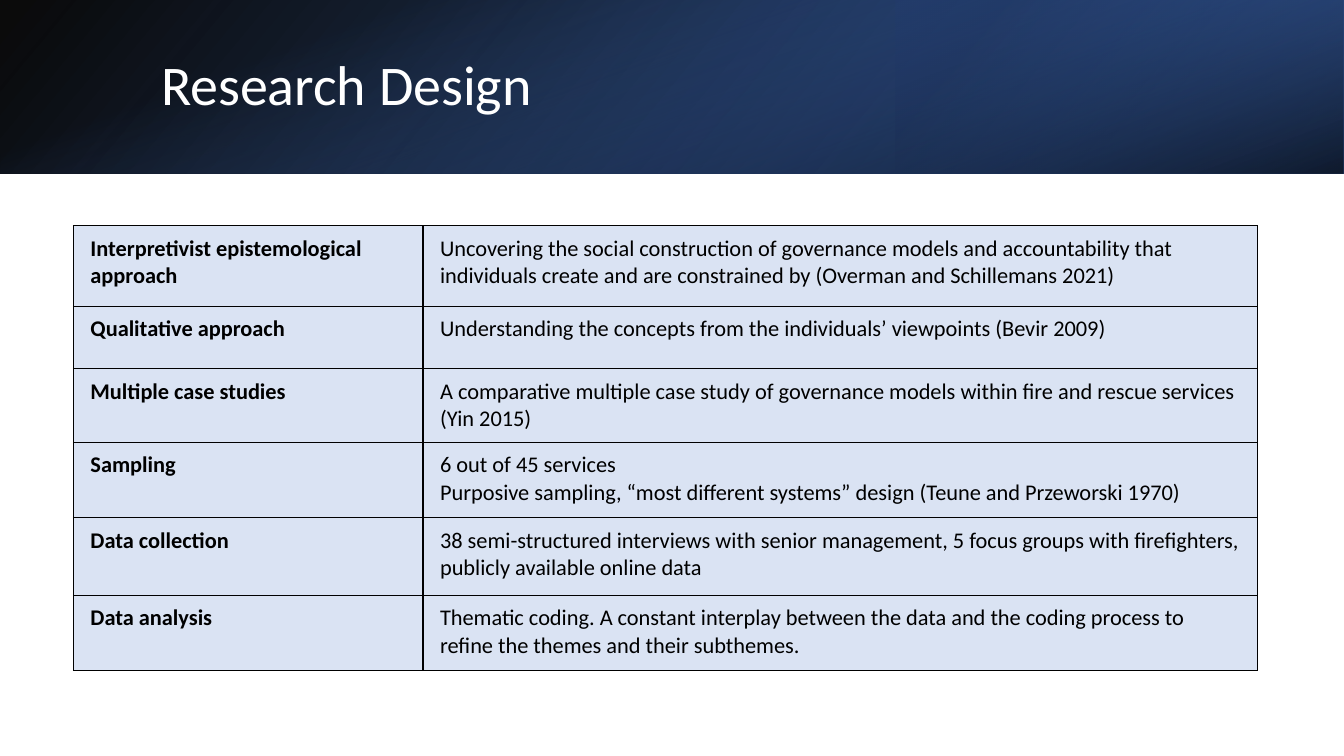
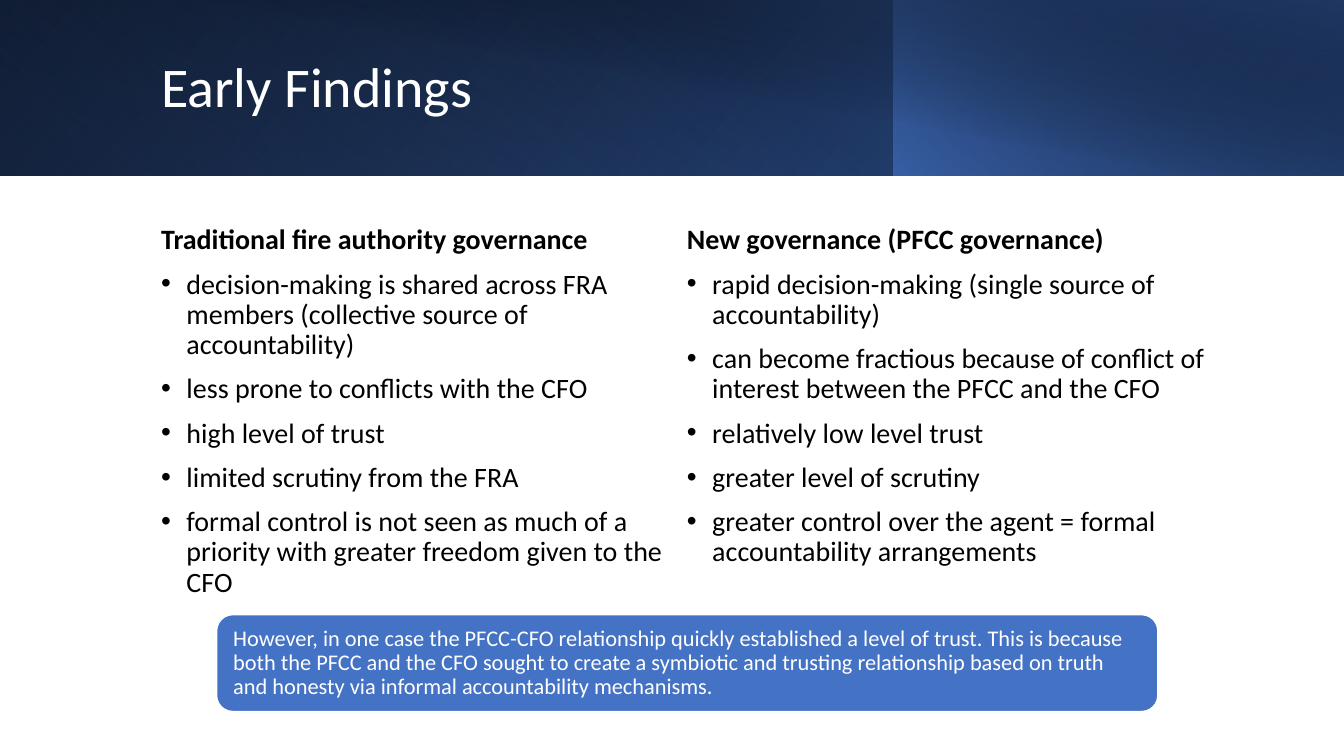
import pptx
import pptx.util
import pptx.dml.color
import pptx.enum.shapes
import pptx.enum.text
import pptx.oxml
import pptx.oxml.ns
import lxml.etree

Cm = pptx.util.Cm
Pt = pptx.util.Pt
qn = pptx.oxml.ns.qn

SLIDE_WIDTH = 33.87
SLIDE_HEIGHT = 19.05
FONT = "Calibri"
BLACK = "000000"
WHITE = "FFFFFF"
BLUE = "4472C4"
MID_BLUE = "2F5597"
NAVY = "203864"
PALE_BLUE = "DAE3F3"

TITLE = {"size": Pt(40), "color": WHITE}
HEADING = {"size": Pt(20), "color": BLACK, "bold": True}
BULLET = {"size": Pt(20), "color": BLACK}
ROW_LABEL = {"size": Pt(16), "color": BLACK, "bold": True}
ROW_DETAIL = {"size": Pt(16), "color": BLACK, "bold": False}
CALLOUT = {"size": Pt(16), "color": WHITE}
TIGHT = {"line_spacing": 0.9}
SPACED = {"line_spacing": 0.9, "space_before": Pt(10)}

DESIGN = [
    ("Interpretivist epistemological approach",
     "Uncovering the social construction of governance models and accountability that "
     "individuals create and are constrained by (Overman and Schillemans 2021)", 2.03),
    ("Qualitative approach",
     "Understanding the concepts from the individuals’ viewpoints (Bevir 2009)", 1.57),
    ("Multiple case studies",
     "A comparative multiple case study of governance models within fire and rescue "
     "services (Yin 2015)", 1.86),
    ("Sampling",
     "6 out of 45 services\n"
     "Purposive sampling, “most different systems” design (Teune and Przeworski 1970)", 1.9),
    ("Data collection",
     "38 semi-structured interviews with senior management, 5 focus groups with "
     "firefighters, publicly available online data", 1.95),
    ("Data analysis",
     "Thematic coding. A constant interplay between the data and the coding process to "
     "refine the themes and their subthemes.", 1.9),
]

FINDINGS = {
    "Traditional fire authority governance": [
        "decision-making is shared across FRA members (collective source of accountability)",
        "less prone to conflicts with the CFO",
        "high level of trust",
        "limited scrutiny from the FRA",
        "formal control is not seen as much of a priority with greater freedom given to the CFO",
    ],
    "New governance (PFCC governance)": [
        "rapid decision-making (single source of accountability)",
        "can become fractious because of conflict of interest between the PFCC and the CFO",
        "relatively low level trust",
        "greater level of scrutiny",
        "greater control over the agent = formal accountability arrangements",
    ],
}

EXCEPTION = (
    "However, in one case the PFCC-CFO relationship quickly established a level of trust. "
    "This is because both the PFCC and the CFO sought to create a symbiotic and trusting "
    "relationship based on truth and honesty via informal accountability mechanisms."
)


def rgb(value):
    return pptx.dml.color.RGBColor.from_string(value)


def apply(target, values):
    for name, value in values.items():
        setattr(target, name, value)


def style_paragraph(paragraph, font_values, spacing):
    apply(paragraph, spacing)
    for run in paragraph.runs:
        apply(run.font, {"name": FONT})
        for name, value in font_values.items():
            if name == "color":
                run.font.color.rgb = rgb(value)
            else:
                setattr(run.font, name, value)


def add_bullet(paragraph):
    properties = paragraph._p.get_or_add_pPr()
    properties.set("marL", str(Cm(0.64)))
    properties.set("indent", str(-Cm(0.64)))
    lxml.etree.SubElement(properties, qn("a:buFont")).set("typeface", "Arial")
    lxml.etree.SubElement(properties, qn("a:buChar")).set("char", "•")


def add_gradient(slide, box, stops, angle, flipped=True, rotation=0):
    band = slide.shapes.add_shape(
        pptx.enum.shapes.MSO_SHAPE.RECTANGLE, *map(Cm, box))
    band.shadow.inherit = False
    band.rotation = rotation
    if flipped:
        band._element.spPr.xfrm.set("flipH", "1")
    band.fill.gradient()
    band.fill.gradient_angle = 360 - angle
    for stop, (position, color, opacity) in zip(band.fill.gradient_stops, stops):
        stop.position = position / 100
        stop.color.rgb = rgb(color)
    colors = band._element.spPr.iter(qn("a:srgbClr"))
    for color, (_, _, opacity) in zip(list(colors), stops):
        lxml.etree.SubElement(color, qn("a:alpha")).set("val", str(opacity * 1000))
    band.line.fill.background()


def add_text_frame(slide, box):
    frame = slide.shapes.add_textbox(*map(Cm, box)).text_frame
    apply(frame, {"word_wrap": True,
                  "vertical_anchor": pptx.enum.text.MSO_ANCHOR.MIDDLE})
    return frame


def add_title(slide, text, box):
    frame = add_text_frame(slide, box)
    frame.text = text
    style_paragraph(frame.paragraphs[0], TITLE, TIGHT)


def add_borders(cell):
    properties = cell._tc.get_or_add_tcPr()
    for side in ("lnL", "lnR", "lnT", "lnB"):
        border = lxml.etree.SubElement(properties, qn("a:" + side))
        border.set("w", str(Pt(1)))
        fill = lxml.etree.SubElement(border, qn("a:solidFill"))
        lxml.etree.SubElement(fill, qn("a:srgbClr")).set("val", BLACK)


def fill_cell(cell, text, font_values):
    apply(cell, {"margin_left": Cm(0.43), "margin_right": Cm(0.43),
                 "margin_top": Cm(0.23), "margin_bottom": Cm(0.23)})
    add_borders(cell)
    cell.fill.solid()
    cell.fill.fore_color.rgb = rgb(PALE_BLUE)
    cell.text_frame.text = text
    for paragraph in cell.text_frame.paragraphs:
        style_paragraph(paragraph, font_values, {})


def add_design_table(slide):
    widths = (8.81, 21.03)
    height = sum(row[2] for row in DESIGN)
    table = slide.shapes.add_table(
        len(DESIGN), len(widths), Cm(1.85), Cm(5.69), Cm(sum(widths)), Cm(height)).table
    apply(table, {"first_row": False, "horz_banding": False})
    for column, width in zip(table.columns, widths):
        column.width = Cm(width)
    for row, (label, detail, row_height) in zip(table.rows, DESIGN):
        row.height = Cm(row_height)
        fill_cell(row.cells[0], label, ROW_LABEL)
        fill_cell(row.cells[1], detail, ROW_DETAIL)


def add_findings(slide):
    frame = add_text_frame(slide, (3.81, 5.26, 27, 10.24))
    frame._txBody.bodyPr.set("numCol", "2")
    paragraph = frame.paragraphs[0]
    for heading, points in FINDINGS.items():
        for text in (heading, *points):
            if paragraph.runs:
                paragraph = frame.add_paragraph()
            paragraph.add_run().text = text
            style_paragraph(paragraph, HEADING if text == heading else BULLET, SPACED)
            if text != heading:
                add_bullet(paragraph)


def add_callout(slide, text):
    callout = slide.shapes.add_shape(
        pptx.enum.shapes.MSO_SHAPE.ROUNDED_RECTANGLE,
        Cm(5.46), Cm(15.49), Cm(23.72), Cm(2.44))
    callout.shadow.inherit = False
    callout.fill.solid()
    callout.fill.fore_color.rgb = rgb(BLUE)
    callout.line.color.rgb = rgb(WHITE)
    callout.line.width = Pt(1)
    frame = callout.text_frame
    apply(frame, {"word_wrap": True,
                  "vertical_anchor": pptx.enum.text.MSO_ANCHOR.MIDDLE,
                  "margin_left": Cm(0.3), "margin_right": Cm(0.3),
                  "margin_top": Cm(0.28), "margin_bottom": Cm(0.28)})
    frame.text = text
    paragraph = frame.paragraphs[0]
    paragraph.alignment = pptx.enum.text.PP_ALIGN.LEFT
    style_paragraph(paragraph, CALLOUT, TIGHT)


def build_research_design(slide):
    band = 4.37
    offset = (SLIDE_WIDTH - band) / 2
    add_gradient(slide, (0, 0, SLIDE_WIDTH, band),
                 [(0, BLACK, 96), (100, MID_BLUE, 100)], 140)
    add_gradient(slide, (22.58, 0, SLIDE_WIDTH - 22.58, band),
                 [(19, NAVY, 68), (100, BLUE, 79)], 320, rotation=180)
    add_gradient(slide, (offset, -offset, band, SLIDE_WIDTH),
                 [(23, BLUE, 0), (99, BLACK, 74)], 340, flipped=False, rotation=90)
    add_title(slide, "Research Design", (3.81, 0.97, 27.89, 2.44))
    add_design_table(slide)


def build_early_findings(slide):
    band = 4.43
    add_gradient(slide, (0, 0, SLIDE_WIDTH, band),
                 [(0, BLACK, 100), (100, MID_BLUE, 100)], 140)
    add_gradient(slide, (0, 0, 22.55, band),
                 [(20, BLUE, 0), (100, NAVY, 55)], 230, rotation=180)
    add_gradient(slide, (22.53, 0, SLIDE_WIDTH - 22.53, band),
                 [(0, BLUE, 66), (100, BLACK, 30)], 220)
    add_gradient(slide, (1.27, 0, SLIDE_WIDTH - 1.27, band),
                 [(50, BLACK, 0), (99, NAVY, 52)], 280, flipped=False)
    add_title(slide, "Early Findings", (3.81, 0.81, 27.48, 2.87))
    add_findings(slide)
    add_callout(slide, EXCEPTION)


def main():
    deck = pptx.Presentation()
    apply(deck, {"slide_width": Cm(SLIDE_WIDTH), "slide_height": Cm(SLIDE_HEIGHT)})
    for build in (build_research_design, build_early_findings):
        build(deck.slides.add_slide(deck.slide_layouts[6]))
    deck.save("out.pptx")


if __name__ == "__main__":
    main()
